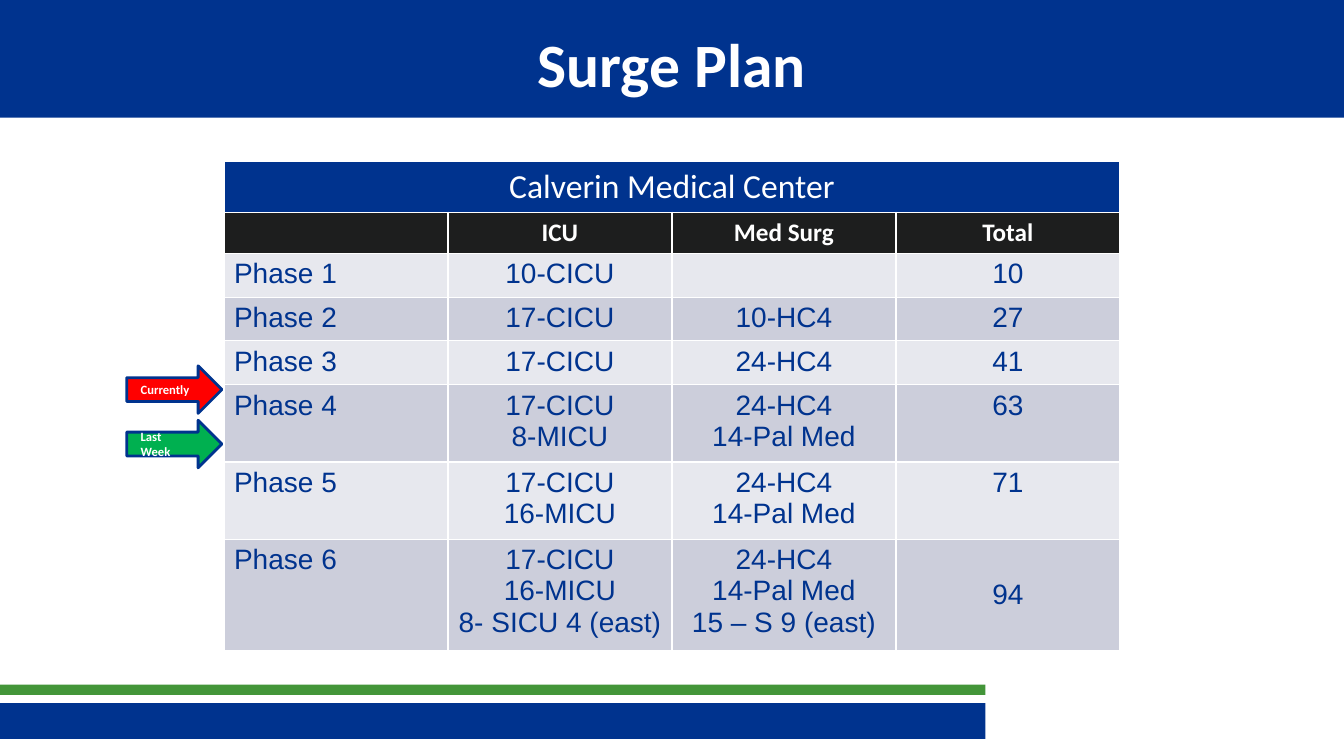
from pptx import Presentation
from pptx.dml.color import RGBColor
from pptx.enum.shapes import MSO_SHAPE
from pptx.enum.text import MSO_ANCHOR, PP_ALIGN
from pptx.oxml import parse_xml
from pptx.oxml.ns import nsdecls
from pptx.util import Pt

# Content
TITLE = "Surge Plan"
CENTER = "Calverin Medical Center"
HEADS = ["", "ICU", "Med Surg", "Total"]
PHASES = [
    ("Phase 1", ["10-CICU"], [], "10"),
    ("Phase 2", ["17-CICU"], ["10-HC4"], "27"),
    ("Phase 3", ["17-CICU"], ["24-HC4"], "41"),
    ("Phase 4", ["17-CICU", "8-MICU"], ["24-HC4", "14-Pal Med"], "63"),
    ("Phase 5", ["17-CICU", "16-MICU"], ["24-HC4", "14-Pal Med"], "71"),
    ("Phase 6", ["17-CICU", "16-MICU", "8- SICU 4 (east)"],
     ["24-HC4", "14-Pal Med", "15 – S 9 (east)"], "94"),
]
MARKERS = [("Currently", "red", 261.3), ("Last Week", "green", 300.2)]


class Theme:
    colors = {"navy": "00338E", "leaf": "439539", "black": "1D1E1E", "white": "FFFFFF",
              "light": "E7E8EE", "dark": "CCCEDB", "red": "FF0000", "green": "00B050"}
    head_font, body_font = "Calibri", "Arial"
    title, center, head, body, marker = 44, 24, 18, 20, 9


def color(name):
    return RGBColor.from_string(Theme.colors[name])


def write(tf, lines, size, font=Theme.head_font, ink="white", bold=False,
          align=PP_ALIGN.CENTER):
    for i, line in enumerate(lines):
        p = tf.paragraphs[0] if i == 0 else tf.add_paragraph()
        p.alignment = align
        r = p.add_run()
        r.text = line
        r.font.size, r.font.name, r.font.bold = Pt(size), font, bold
        r.font.color.rgb = color(ink)


def add_box(shapes, kind, x, y, w, h, fill, line=None):
    sp = shapes.add_shape(kind, Pt(x), Pt(y), Pt(w), Pt(h))
    sp.shadow.inherit = False
    sp.fill.solid()
    sp.fill.fore_color.rgb = color(fill)
    if line:
        sp.line.color.rgb = color(line)
        sp.line.width = Pt(2)
    else:
        sp.line.fill.background()
    return sp


def add_label(shapes, x, y, w, h, text, size, wrap, **fmt):
    tf = shapes.add_textbox(Pt(x), Pt(y), Pt(w), Pt(h)).text_frame
    tf.word_wrap = wrap
    tf.vertical_anchor = MSO_ANCHOR.MIDDLE
    write(tf, [text], size, bold=True, **fmt)


def style_cell(cell, fill):
    # Borders come before the fill in the cell properties
    tc_pr = cell._tc.get_or_add_tcPr()
    for side in ("lnL", "lnR", "lnT", "lnB"):
        tc_pr.append(parse_xml(
            f'<a:{side} {nsdecls("a")} w="12700"><a:solidFill>'
            f'<a:srgbClr val="{Theme.colors["white"]}"/></a:solidFill></a:{side}>'))
    cell.fill.solid()
    cell.fill.fore_color.rgb = color(fill)


def add_plan(s):
    heights = [36, 29.5] + [7.2 + 22.3 * max(1, len(icu)) for _, icu, _, _ in PHASES]
    table = s.shapes.add_table(len(heights), len(HEADS), Pt(160), Pt(115.5),
                               Pt(640), Pt(sum(heights))).table
    for row, height in zip(table.rows, heights):
        row.height = Pt(height)
    fills = ["navy", "black"] + ["light", "dark"] * (len(PHASES) // 2)
    for r, fill in enumerate(fills):
        for c in range(len(HEADS)):
            style_cell(table.cell(r, c), fill)

    # Header rows
    table.cell(0, 0).merge(table.cell(0, len(HEADS) - 1))
    write(table.cell(0, 0).text_frame, [CENTER], Theme.center)
    for c, head in enumerate(HEADS):
        if head:
            write(table.cell(1, c).text_frame, [head], Theme.head, bold=True)

    # Phase rows
    for r, (phase, icu, med_surg, total) in enumerate(PHASES, start=2):
        for c, lines in enumerate(([phase], icu, med_surg, [total])):
            write(table.cell(r, c).text_frame, lines, Theme.body, Theme.body_font, "navy",
                  align=PP_ALIGN.CENTER if c else PP_ALIGN.LEFT)
    table.cell(len(heights) - 1, len(HEADS) - 1).vertical_anchor = MSO_ANCHOR.MIDDLE


def main():
    prs = Presentation()
    prs.slide_width, prs.slide_height = Pt(960), Pt(540)
    s = prs.slides.add_slide(prs.slide_layouts[6])

    # Footer bars, title band and title
    add_box(s.shapes, MSO_SHAPE.RECTANGLE, -2, 502.3, 706, 25.5, "navy")
    add_box(s.shapes, MSO_SHAPE.RECTANGLE, -2, 489, 706, 7.4, "leaf")
    add_box(s.shapes, MSO_SHAPE.RECTANGLE, 0, 0, 960, 84, "navy")
    add_label(s.shapes, 48, 12, 864, 66, TITLE, Theme.title, True)

    add_plan(s)

    # Phase markers
    for text, fill, y in MARKERS:
        group = s.shapes.add_group_shape()
        add_box(group.shapes, MSO_SHAPE.RIGHT_ARROW, 90.5, y, 68, 34, fill, "navy")
        add_label(group.shapes, 93.4, y + 8, 52, 18, text, Theme.marker, False,
                  align=PP_ALIGN.LEFT)

    prs.save("out.pptx")


if __name__ == "__main__":
    main()
